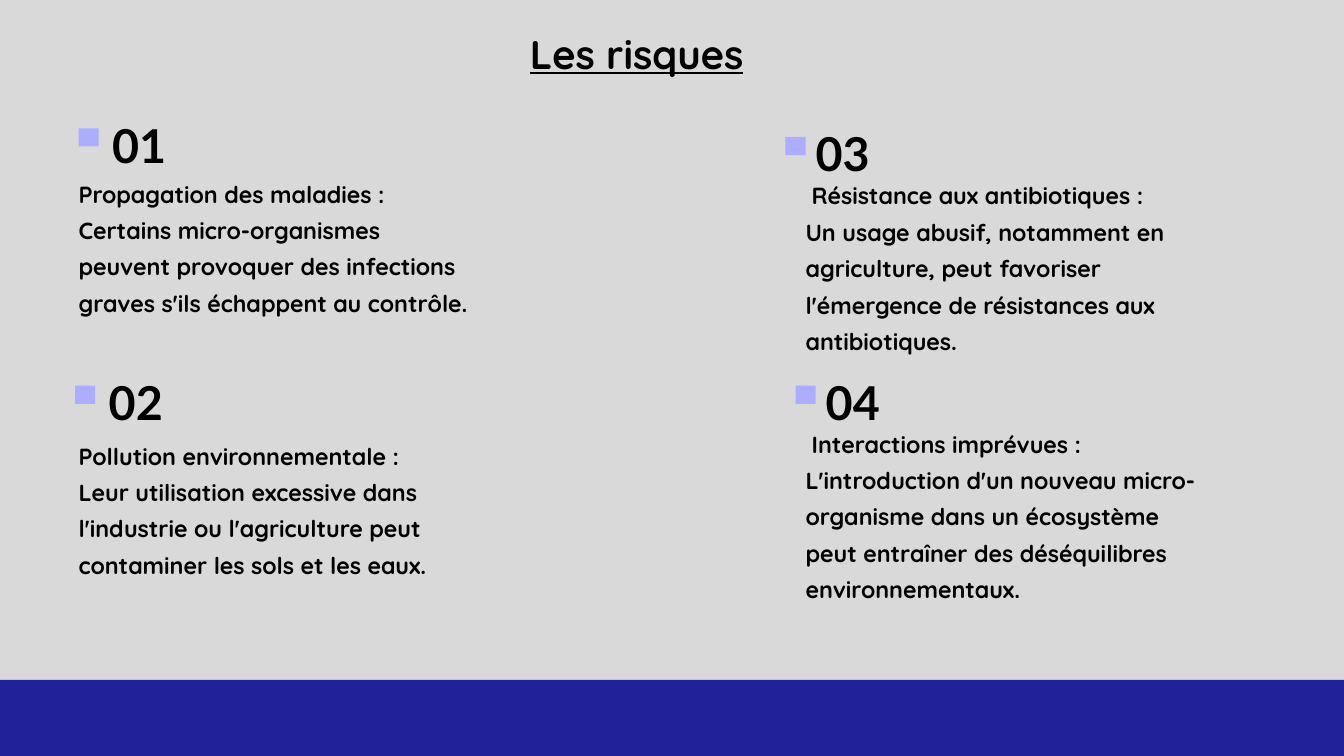
from dataclasses import dataclass

from pptx import Presentation
from pptx.dml.color import RGBColor
from pptx.enum.shapes import MSO_SHAPE
from pptx.enum.text import MSO_ANCHOR, PP_ALIGN
from pptx.util import Cm, Pt


@dataclass(frozen=True)
class Theme:
    background: str = "D9D9D9"
    marker: str = "ACADFF"
    band: str = "212299"
    ink: str = "000000"
    text_font: str = "Quicksand"
    number_font: str = "Lato"
    title_size: float = 43
    title_leading: float = 60.2
    number_size: float = 50
    number_leading: float = 51.5
    body_size: float = 25
    body_leading: float = 39


THEME = Theme()
TITLE = "Les risques"
RISKS = [
    dict(number="01", marker=(2.97, 4.85), body=(2.97, 6.48, 14.7), lines=5, heading_indent=0,
         heading="Propagation des maladies :",
         detail="Certains micro-organismes peuvent provoquer des infections graves "
                "s'ils échappent au contrôle."),
    dict(number="02", marker=(2.84, 14.58), body=(2.97, 16.38, 14.7), lines=4, heading_indent=0,
         heading="Pollution environnementale :",
         detail="Leur utilisation excessive dans l'industrie ou l'agriculture peut "
                "contaminer les sols et les eaux."),
    dict(number="03", marker=(29.69, 5.18), body=(30.45, 6.55, 14.07), lines=5, heading_indent=0.23,
         heading="Résistance aux antibiotiques :",
         detail="Un usage abusif, notamment en agriculture, peut favoriser l'émergence "
                "de résistances aux antibiotiques."),
    dict(number="04", marker=(30.07, 14.58), body=(30.45, 15.93, 15.09), lines=6, heading_indent=0.23,
         heading="Interactions imprévues :",
         detail="L'introduction d'un nouveau micro-organisme dans un écosystème peut "
                "entraîner des déséquilibres environnementaux."),
]
SLIDE_WIDTH, SLIDE_HEIGHT = 50.8, 28.58
BAND_TOP = 25.7
MARKER_SIZE = (0.76, 0.69)
NUMBER_SIZE = (6.1, 1.8)
NUMBER_RISE = 0.15
LEFT_NUMBER_GAP, RIGHT_NUMBER_GAP = 1.27, 1.14
CM_PER_POINT = 2.54 / 72


def add_block(page, color, left, top, width, height):
    block = page.shapes.add_shape(MSO_SHAPE.RECTANGLE, Cm(left), Cm(top), Cm(width), Cm(height))
    block.shadow.inherit = False
    block.fill.solid()
    block.fill.fore_color.rgb = RGBColor.from_string(color)
    block.line.fill.background()


def write(box, text, font, size, leading, align, underline=None):
    frame = box.text_frame
    frame.word_wrap = True
    frame.vertical_anchor = MSO_ANCHOR.TOP
    frame.margin_left = frame.margin_right = frame.margin_top = frame.margin_bottom = 0
    frame.text = text
    for paragraph in frame.paragraphs:
        paragraph.alignment = align
        paragraph.line_spacing = Pt(leading)
        paragraph.space_before = Pt(0)
        for span in paragraph.runs:
            span.font.name = font
            span.font.size = Pt(size)
            span.font.bold = True
            span.font.underline = underline
            span.font.color.rgb = RGBColor.from_string(THEME.ink)


def add_text(page, left, top, width, height, *style):
    box = page.shapes.add_textbox(Cm(left), Cm(top), Cm(width), Cm(height))
    write(box, *style)
    return box


def add_risk(page, risk):
    left, top = risk["marker"]
    add_block(page, THEME.marker, left, top, *MARKER_SIZE)
    gap = LEFT_NUMBER_GAP if left < SLIDE_WIDTH / 2 else RIGHT_NUMBER_GAP
    add_text(page, left + gap, top - NUMBER_RISE, *NUMBER_SIZE, risk["number"],
             THEME.number_font, THEME.number_size, THEME.number_leading, PP_ALIGN.JUSTIFY)
    height = risk["lines"] * THEME.body_leading * CM_PER_POINT
    body = add_text(page, *risk["body"], height, f"{risk['heading']}\n{risk['detail']}",
                    THEME.text_font, THEME.body_size, THEME.body_leading, PP_ALIGN.LEFT)
    heading = body.text_frame.paragraphs[0]
    heading._p.get_or_add_pPr().set("indent", str(int(Cm(risk["heading_indent"]))))


def main():
    deck = Presentation()
    deck.slide_width, deck.slide_height = Cm(SLIDE_WIDTH), Cm(SLIDE_HEIGHT)
    page = deck.slides.add_slide(deck.slide_layouts[5])
    page.background.fill.solid()
    page.background.fill.fore_color.rgb = RGBColor.from_string(THEME.background)

    title = page.shapes.title
    title.left, title.top, title.width, title.height = Cm(4.95), Cm(0.79), Cm(38.23), Cm(2.11)
    write(title, TITLE, THEME.text_font, THEME.title_size, THEME.title_leading,
          PP_ALIGN.CENTER, underline=True)

    for risk in RISKS:
        add_risk(page, risk)
    add_block(page, THEME.band, 0, BAND_TOP, SLIDE_WIDTH, SLIDE_HEIGHT - BAND_TOP)
    deck.save("out.pptx")


if __name__ == "__main__":
    main()
